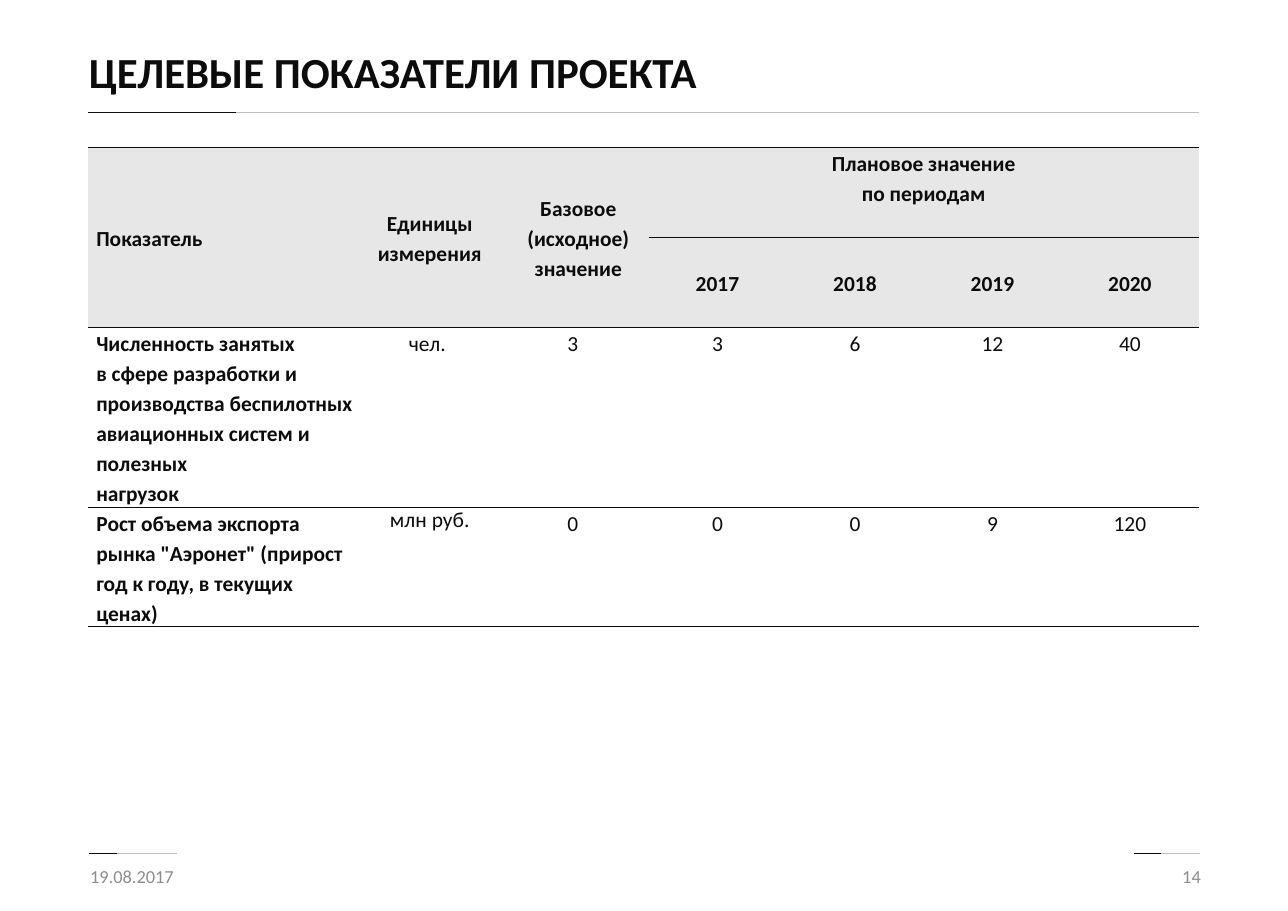
"""Builds the slide with the project's target indicators."""
import pptx
import pptx.dml.color
import pptx.enum.shapes
import pptx.enum.text
import pptx.util
from lxml import etree
from pptx.oxml.ns import qn

Cm, Pt = pptx.util.Cm, pptx.util.Pt
RGBColor = pptx.dml.color.RGBColor
ALIGN = pptx.enum.text.PP_ALIGN
ANCHOR = pptx.enum.text.MSO_ANCHOR

INK = RGBColor(0x0C, 0x0C, 0x0C)
RULE = RGBColor(0xBF, 0xBF, 0xBF)
MUTED = RGBColor(0x8C, 0x8C, 0x8C)
HEAD = RGBColor(0xE7, 0xE7, 0xE7)
FONT = "Calibri"
NO_GRID = "{2D5ABB26-0587-4C30-8999-92F81FD0307C}"

TITLE = "ЦЕЛЕВЫЕ ПОКАЗАТЕЛИ ПРОЕКТА"
DATE = "19.08.2017"
NUMBER = "14"
ROWS = [
    ["Показатель", "Единицы измерения", "Базовое (исходное) значение",
     "Плановое значение\nпо периодам", "", "", ""],
    ["", "", "", "2017", "2018", "2019", "2020"],
    ["Численность занятых\nв сфере разработки и\nпроизводства беспилотных\n"
     "авиационных систем и полезных\nнагрузок",
     "чел. ", "3", "3", "6", "12", "40"],
    ["Рост объема экспорта рынка \"Аэронет\" (прирост год к году, в текущих ценах)",
     "млн руб.", "0", "0", "0", "9", "120"],
]
COL_WIDTHS = [6.32, 3.1, 3.5] + [3.17] * 4
ROW_HEIGHTS = [2.07, 2.07, 4.15, 2.76]
HEAD_ROWS, FIXED_COLS = 2, 3
LEFT, TABLE_TOP = 2.04, 3.4

RULES = [
    (2.04, 2.59, 25.6, 3.4),
    (26.14, 19.68, 1.52, 0.64),
    (2.05, 19.68, 2.03, 0.64),
]


def write(tf, text, size=14, color=INK, bold=False, align=ALIGN.LEFT, spacing=1.0):
    for i, line in enumerate(text.split("\n")):
        p = tf.paragraphs[0] if i == 0 else tf.add_paragraph()
        p.alignment, p.line_spacing = align, spacing
        r = p.add_run()
        r.text = line
        r.font.name, r.font.size, r.font.bold = FONT, Pt(size), bold
        r.font.color.rgb = color


def add_text(s, text, left, top, width, height, **fmt):
    tf = s.shapes.add_textbox(Cm(left), Cm(top), Cm(width), Cm(height)).text_frame
    tf.word_wrap = True
    tf.vertical_anchor = ANCHOR.MIDDLE
    write(tf, text, **fmt)


def add_rule(s, left, top, width, accent):
    for length, color in ((width, RULE), (accent, INK)):
        line = s.shapes.add_connector(
            pptx.enum.shapes.MSO_CONNECTOR.STRAIGHT,
            Cm(left), Cm(top), Cm(left + length), Cm(top))
        line.line.color.rgb, line.line.width = color, Pt(0.5)
        etree.SubElement(line._element.spPr, qn("a:effectLst"))


def add_border(cell, side):
    ln = etree.SubElement(cell._tc.get_or_add_tcPr(), qn(side), w=str(Pt(0.5)))
    fill = etree.SubElement(ln, qn("a:solidFill"))
    etree.SubElement(fill, qn("a:srgbClr"), val=str(INK))


def format_cell(cell, row, col):
    head = row < HEAD_ROWS
    tall = head and col < FIXED_COLS
    if not (tall and row == 1):
        add_border(cell, "a:lnT")
    if not (tall and row == 0):
        add_border(cell, "a:lnB")
    if head:
        cell.fill.solid()
        cell.fill.fore_color.rgb = HEAD
    else:
        cell.fill.background()
    cell.margin_left = cell.margin_right = Cm(0.18)
    cell.margin_top = cell.margin_bottom = 0
    middle = tall or row == 1
    cell.vertical_anchor = ANCHOR.MIDDLE if middle else ANCHOR.TOP
    text = ROWS[row][col]
    if text:
        write(cell.text_frame, text, bold=head or col == 0,
              align=ALIGN.CENTER if col else ALIGN.LEFT,
              spacing=1.0 if (row, col) == (3, 1) else 1.15)
    if tall and col == 2:
        cell.margin_left = Cm(0.43)


def add_indicators(s):
    frame = s.shapes.add_table(
        len(ROWS), len(COL_WIDTHS), Cm(LEFT), Cm(TABLE_TOP),
        Cm(sum(COL_WIDTHS)), Cm(sum(ROW_HEIGHTS)))
    table = frame.table
    table.first_row = table.horz_banding = False
    table._tbl.tblPr.find(qn("a:tableStyleId")).text = NO_GRID
    for column, width in zip(table.columns, COL_WIDTHS):
        column.width = Cm(width)
    for row, height in zip(table.rows, ROW_HEIGHTS):
        row.height = Cm(height)
    for col in range(FIXED_COLS):
        table.cell(0, col).merge(table.cell(1, col))
    table.cell(0, FIXED_COLS).merge(table.cell(0, len(COL_WIDTHS) - 1))
    for row in range(len(ROWS)):
        for col in range(len(COL_WIDTHS)):
            format_cell(table.cell(row, col), row, col)


def main():
    prs = pptx.Presentation()
    prs.slide_width, prs.slide_height = Cm(29.7), Cm(21)
    s = prs.slides.add_slide(prs.slide_layouts[6])
    for rule in RULES:
        add_rule(s, *rule)
    add_text(s, TITLE, 1.8, 0.71, 20.24, 2.03, size=28, bold=True, spacing=0.9)
    add_text(s, DATE, 1.83, 19.63, 6.68, 1.12, size=12, color=MUTED)
    add_text(s, NUMBER, 21.26, 19.63, 6.68, 1.12, size=12, color=MUTED,
             align=ALIGN.RIGHT)
    add_indicators(s)
    prs.save("out.pptx")


if __name__ == "__main__":
    main()
